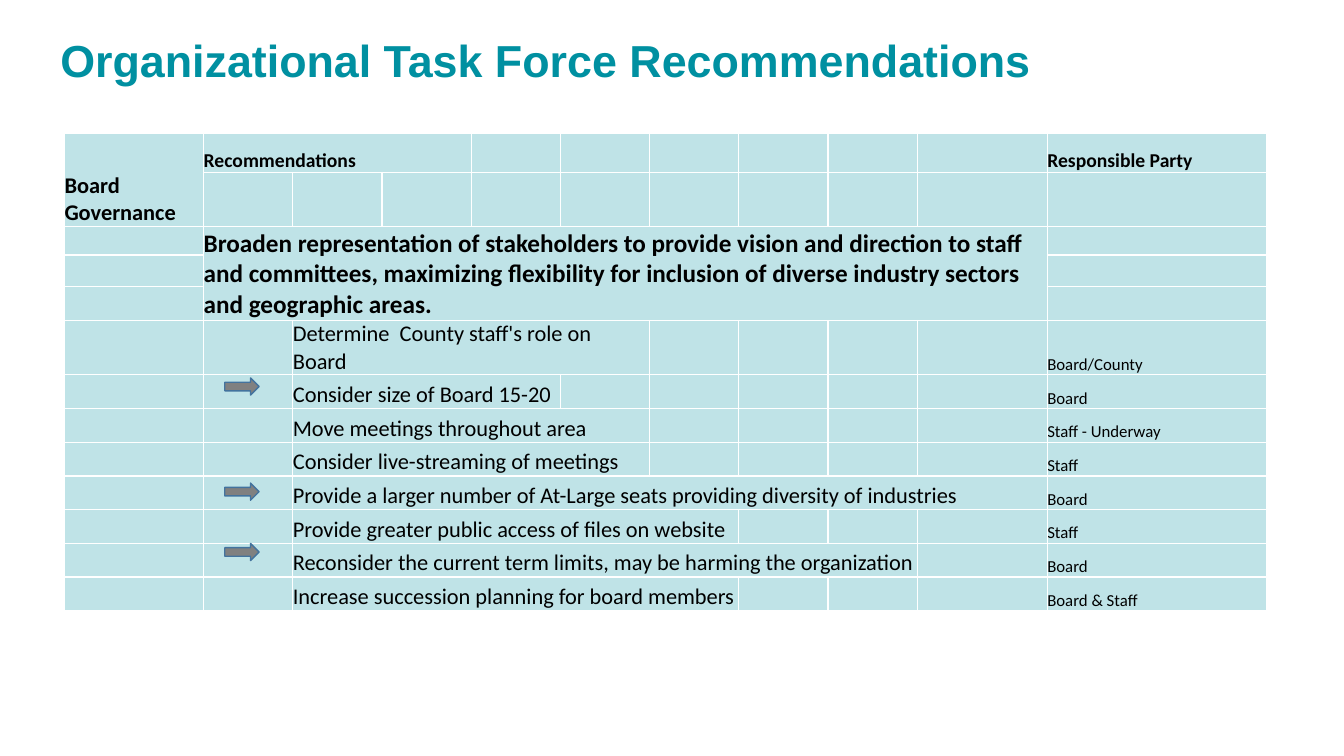
from lxml import etree
from pptx import Presentation
from pptx.dml.color import RGBColor
from pptx.enum.shapes import MSO_SHAPE
from pptx.enum.text import MSO_ANCHOR
from pptx.oxml.ns import qn
from pptx.util import Inches, Pt

ARROW = MSO_SHAPE.RIGHT_ARROW
BOTTOM = MSO_ANCHOR.BOTTOM
MIDDLE = MSO_ANCHOR.MIDDLE

TEAL = RGBColor(0x00, 0x90, 0xA1)
BLACK = RGBColor(0x00, 0x00, 0x00)
WHITE = RGBColor(0xFF, 0xFF, 0xFF)
GRAY = RGBColor(0x80, 0x80, 0x80)
BLUE = RGBColor(0x43, 0x73, 0x9E)

LEFT, TOP = 0.64, 1.32
WIDTH = 11.93
FIRST, WIDE, PARTY = 1.38, 1.29, 2.18
STEP = (WIDTH - FIRST - WIDE - PARTY) / 8
COLS = [FIRST] + [STEP] * 8 + [WIDE, PARTY]
ROWS = [0.39, 0.54, 0.28, 0.31, 0.34, 0.54] + [2.34 / 7] * 7

GOAL = ("Broaden representation of stakeholders to provide vision and direction "
        "to staff and committees, maximizing flexibility for inclusion of "
        "diverse industry sectors and geographic areas.")

# row, column, rows spanned, columns spanned, text, size
HEADS = [
    (0, 0, 2, 1, "Board Governance", 16),
    (0, 1, 1, 3, "Recommendations", 14),
    (0, 10, 1, 1, "Responsible Party", 14),
    (2, 1, 3, 9, GOAL, 18),
]

# text, columns spanned, responsible party
TASKS = [
    ("Determine  County staff's role on Board", 4, "Board/County"),
    ("Consider size of Board 15-20", 3, "Board"),
    ("Move meetings throughout area", 4, "Staff - Underway"),
    ("Consider live-streaming of meetings", 4, "Staff"),
    ("Provide a larger number of At-Large seats providing diversity of industries",
     8, "Board"),
    ("Provide greater public access of files on website", 5, "Staff"),
    ("Reconsider the current term limits, may be harming the organization",
     7, "Board"),
    ("Increase succession planning for board members", 5, "Board & Staff"),
]
TASK_ROW = 5

# table row, offset below its top
MARKS = [(6, 0.03), (9, 0.07), (11, 0)]


def add_run(para, text, size, bold, color=BLACK, face="Calibri"):
    run = para.add_run()
    run.text = text
    font = run.font
    font.size, font.bold, font.name = Pt(size), bold, face
    font.color.rgb = color


def add_title(slide, text):
    box = slide.shapes.add_textbox(
        Inches(0.5), Inches(0.36), Inches(11.5), Inches(0.54))
    frame = box.text_frame
    frame.word_wrap = True
    frame.vertical_anchor = MIDDLE
    para = frame.paragraphs[0]
    para.line_spacing = 0.9
    add_run(para, text, 32, True, TEAL, "Arial")


def style_cell(cell):
    """Give the cell a pale fill, white borders and no insets."""
    cell.margin_left = cell.margin_top = cell.margin_bottom = 0
    cell.margin_right = Inches(0.02)
    cell.vertical_anchor = BOTTOM
    cell.fill.solid()
    cell.fill.fore_color.rgb = TEAL
    props = cell._tc.get_or_add_tcPr()
    tint = props.find(".//" + qn("a:srgbClr"))
    etree.SubElement(tint, qn("a:alpha"), val="25000")
    for spot, side in enumerate(("a:lnL", "a:lnR", "a:lnT", "a:lnB")):
        line = etree.Element(qn(side), w=str(Pt(1)))
        solid = etree.SubElement(line, qn("a:solidFill"))
        etree.SubElement(solid, qn("a:srgbClr"), val=str(WHITE))
        props.insert(spot, line)
    # Small end mark keeps empty rows from growing
    para = cell.text_frame.paragraphs[0]
    etree.SubElement(para._p, qn("a:endParaRPr"), sz="1200")


def fill_cell(table, row, col, down, across, text, size, bold):
    cell = table.cell(row, col)
    if down * across > 1:
        cell.merge(table.cell(row + down - 1, col + across - 1))
    add_run(cell.text_frame.paragraphs[0], text, size, bold)


def add_grid(slide):
    frame = slide.shapes.add_table(
        len(ROWS), len(COLS), Inches(LEFT), Inches(TOP),
        Inches(WIDTH), Inches(sum(ROWS)))
    table = frame.table
    table.first_row = table.horz_banding = False
    for col, width in zip(table.columns, COLS):
        col.width = Inches(width)
    for row, height in zip(table.rows, ROWS):
        row.height = Inches(height)
        for cell in row.cells:
            style_cell(cell)
    for head in HEADS:
        fill_cell(table, *head, True)
    for row, (text, across, party) in enumerate(TASKS, TASK_ROW):
        fill_cell(table, row, 2, 1, across, text, 16, False)
        fill_cell(table, row, 10, 1, 1, party, 12, False)


def add_mark(slide, row, drop):
    left = LEFT + FIRST + 0.21
    top = TOP + sum(ROWS[:row]) + drop
    mark = slide.shapes.add_shape(
        ARROW, Inches(left), Inches(top), Inches(0.34), Inches(0.17))
    mark.shadow.inherit = False
    mark.fill.solid()
    mark.fill.fore_color.rgb = GRAY
    mark.line.color.rgb = BLUE
    mark.line.width = Pt(1)


def main():
    deck = Presentation()
    deck.slide_width, deck.slide_height = Inches(13.33), Inches(7.5)
    slide = deck.slides.add_slide(deck.slide_layouts[6])
    add_title(slide, "Organizational Task Force Recommendations")
    add_grid(slide)
    for row, drop in MARKS:
        add_mark(slide, row, drop)
    deck.save("out.pptx")


if __name__ == "__main__":
    main()
